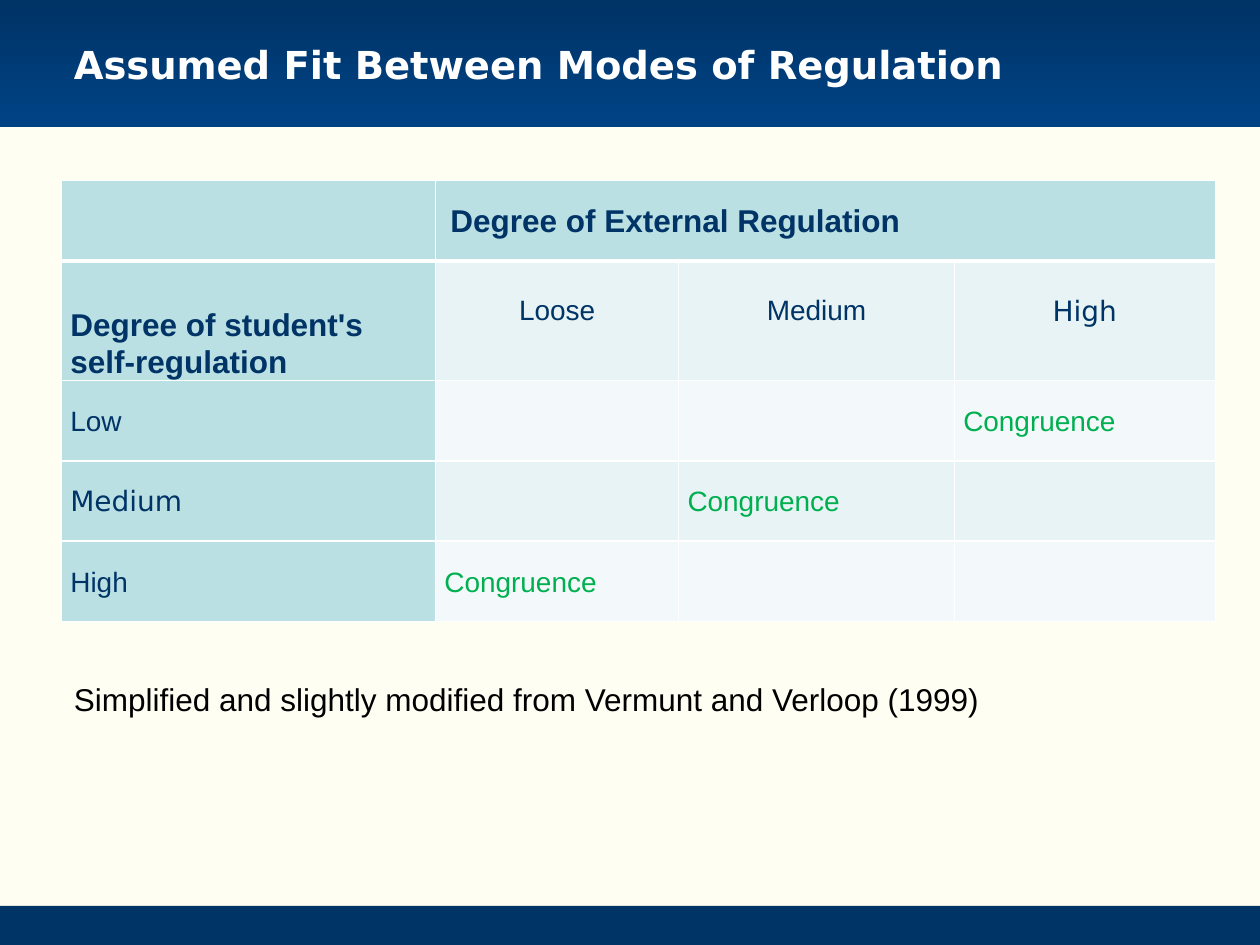
from lxml import etree
from pptx import Presentation
from pptx import util as u
from pptx.dml.color import RGBColor
from pptx.enum import shapes, text
from pptx.oxml.ns import qn

NAVY = RGBColor(0x00, 0x33, 0x66)
BLUE = RGBColor(0x00, 0x43, 0x85)
TEAL = RGBColor(0xBB, 0xE0, 0xE3)
PALE = RGBColor(0xE7, 0xF3, 0xF4)
PALEST = RGBColor(0xF3, 0xF9, 0xFA)
GREEN = RGBColor(0x00, 0xB0, 0x50)
IVORY = RGBColor(0xFF, 0xFE, 0xF3)
WHITE = RGBColor(0xFF, 0xFF, 0xFF)
BLACK = RGBColor(0x00, 0x00, 0x00)
SANS = "Arial"
WIDE = "DejaVu Sans"

LEFT = 1.24
COLUMNS = [7.54, 4.9, 5.56, 5.26]
ROWS = [1.62, 2.41, 1.62, 1.62, 1.62]
LEVELS = ["Low", "Medium", "High"]


class SlideBuilder:
    def __init__(self, page):
        self.page = page
        fill = page.background.fill
        fill.solid()
        fill.fore_color.rgb = IVORY

    def band(self, top, height, start, end=None):
        """Full-width bar, shaded downwards when an end colour is given."""
        bar = self.page.shapes.add_shape(
            shapes.MSO_SHAPE.RECTANGLE, 0, u.Cm(top), u.Cm(25.4), u.Cm(height))
        bar.shadow.inherit = False
        bar.line.fill.background()
        if end is None:
            bar.fill.solid()
            bar.fill.fore_color.rgb = start
        else:
            bar.fill.gradient()
            bar.fill.gradient_angle = 270
            for stop, color in zip(bar.fill.gradient_stops, (start, end)):
                stop.color.rgb = color

    def set_text(self, frame, words, size, color, font=SANS, bold=False):
        frame.text = words
        for para in frame.paragraphs:
            for span in para.runs:
                span.font.size = u.Pt(size)
                span.font.name = font
                span.font.bold = bold
                span.font.color.rgb = color

    def text_box(self, top, width, height, words, size, color, **style):
        box = self.page.shapes.add_textbox(
            u.Cm(LEFT), u.Cm(top), u.Cm(width), u.Cm(height))
        frame = box.text_frame
        frame.word_wrap = True
        frame.vertical_anchor = text.MSO_ANCHOR.MIDDLE
        self.set_text(frame, words, size, color, **style)

    def table(self, top, columns, rows):
        frame = self.page.shapes.add_table(
            len(rows), len(columns), u.Cm(LEFT), u.Cm(top),
            u.Cm(sum(columns)), u.Cm(sum(rows)))
        grid = frame.table
        for column, width in zip(grid.columns, columns):
            column.width = u.Cm(width)
        for row, height in zip(grid.rows, rows):
            row.height = u.Cm(height)
        return grid

    def paint_cell(self, cell, color, top_line=1, bottom_line=1):
        """White borders (in points) first, then the fill, as the schema orders."""
        props = cell._tc.get_or_add_tcPr()
        widths = {"L": 1, "R": 1, "T": top_line, "B": bottom_line}
        for side, points in widths.items():
            line = etree.SubElement(props, qn(f"a:ln{side}"), w=str(u.Pt(points)))
            fill = etree.SubElement(line, qn("a:solidFill"))
            etree.SubElement(fill, qn("a:srgbClr"), val=str(WHITE))
        cell.fill.solid()
        cell.fill.fore_color.rgb = color

    def cell_text(self, cell, words, size=16, color=NAVY, left=0.18, top=0,
                  anchor=text.MSO_ANCHOR.MIDDLE, align=text.PP_ALIGN.LEFT, **style):
        cell.margin_left, cell.margin_right = u.Cm(left), u.Cm(0.18)
        cell.margin_top, cell.margin_bottom = u.Cm(top), 0
        cell.vertical_anchor = anchor
        self.set_text(cell.text_frame, words, size, color, **style)
        for para in cell.text_frame.paragraphs:
            para.alignment = align
            para.line_spacing = 1.07


def fill_regulation_table(builder, grid):
    for r in range(len(ROWS)):
        for c in range(len(COLUMNS)):
            color = TEAL if r == 0 or c == 0 else (PALE if r % 2 else PALEST)
            builder.paint_cell(grid.cell(r, c), color,
                               top_line=3 if r == 1 else 1,
                               bottom_line=3 if r == 0 else 1)

    grid.cell(0, 1).merge(grid.cell(0, 3))
    builder.cell_text(grid.cell(0, 1), "Degree of External Regulation",
                      size=18, left=0.3, bold=True)
    builder.cell_text(grid.cell(1, 0), "Degree of student's\nself-regulation",
                      size=18, bold=True, anchor=text.MSO_ANCHOR.BOTTOM)

    external = [("Loose", SANS), ("Medium", SANS), ("High", WIDE)]
    for c, (level, font) in enumerate(external, start=1):
        builder.cell_text(grid.cell(1, c), level, font=font, top=0.65,
                          anchor=text.MSO_ANCHOR.TOP, align=text.PP_ALIGN.CENTER)

    for i, level in enumerate(LEVELS):
        builder.cell_text(grid.cell(i + 2, 0), level,
                          font=WIDE if level == "Medium" else SANS)
        builder.cell_text(grid.cell(i + 2, 3 - i), "Congruence", color=GREEN)


def main():
    deck = Presentation()
    deck.slide_width, deck.slide_height = u.Cm(25.4), u.Cm(19.05)
    builder = SlideBuilder(deck.slides.add_slide(deck.slide_layouts[6]))
    builder.band(18.26, 0.79, NAVY)
    builder.band(0, 2.57, NAVY, BLUE)
    builder.text_box(0.69, 20.85, 1.19, "Assumed Fit Between Modes of Regulation",
                     22, WHITE, font=WIDE, bold=True)
    fill_regulation_table(builder, builder.table(3.64, COLUMNS, ROWS))
    builder.text_box(13.59, 19.08, 1.02,
                     "Simplified and slightly modified from Vermunt and Verloop (1999)",
                     18, BLACK)
    deck.save("out.pptx")


if __name__ == "__main__":
    main()
